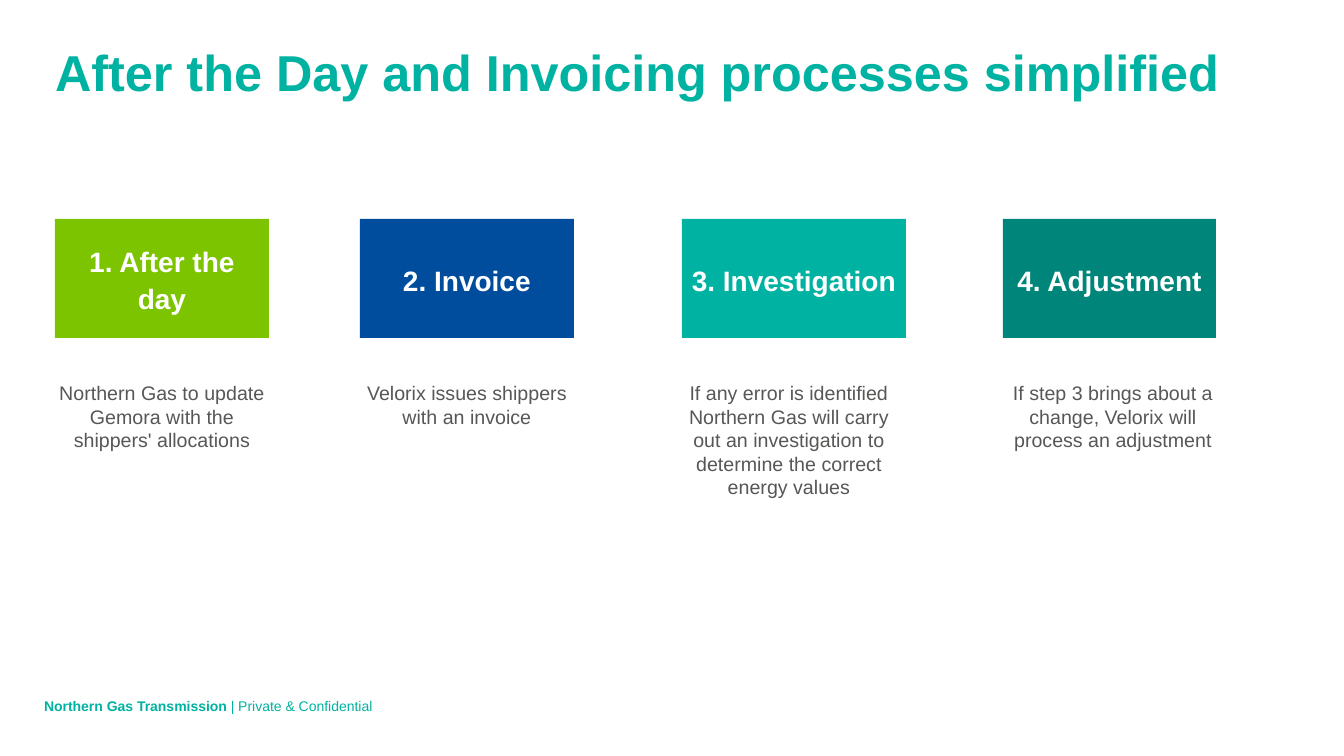
from pptx import Presentation
from pptx import util as u
from pptx.dml.color import RGBColor
from pptx.enum import shapes, text

HUES = {"teal": "00B2A1", "lime": "7CC400", "blue": "004C9D",
        "pine": "00857A", "gray": "575756", "white": "FFFFFF"}
TITLE = "After the Day and Invoicing processes simplified"
FOOTER = [("Northern Gas Transmission ", True), ("| Private & Confidential", False)]
STEPS = [
    ("1. After the day", "lime", 55, 214, 55,
     "Northern Gas to update Gemora with the shippers' allocations", 71),
    ("2. Invoice", "blue", 360, 214, 360,
     "Velorix issues shippers with an invoice", 47),
    ("3. Investigation", "teal", 682, 224, 682,
     "If any error is identified Northern Gas will carry out an investigation "
     "to determine the correct energy values", 119),
    ("4. Adjustment", "pine", 1003, 213, 1006,
     "If step 3 brings about a change, Velorix will process an adjustment", 71),
]
BOX_TOP, BOX_HIGH = 219, 119
NOTE_TOP, NOTE_WIDE = 381, 214
PAD = 8


def px(n):
    return round(n * 914400 / 100.8)


def write(shape, runs, size, hue, pad=0, mid=False, center=False, after=0, lead=None):
    frame = shape.text_frame
    frame.word_wrap = True
    frame.margin_left = frame.margin_right = px(pad)
    frame.margin_top = frame.margin_bottom = px(pad)
    frame.vertical_anchor = text.MSO_ANCHOR.MIDDLE if mid else text.MSO_ANCHOR.TOP
    para = frame.paragraphs[0]
    para.alignment = text.PP_ALIGN.CENTER if center else text.PP_ALIGN.LEFT
    para.space_after = u.Pt(after)
    if lead:
        para.line_spacing = lead
    for words, bold in runs:
        run = para.add_run()
        run.text = words
        font = run.font
        font.name, font.size, font.bold = "Arial", u.Pt(size), bold
        font.color.rgb = RGBColor.from_string(HUES[hue])


def label(slide, area, runs, size, hue, **style):
    box = slide.shapes.add_textbox(*map(px, area))
    write(box, runs, size, hue, **style)
    return box


def block(slide, area, words, hue):
    box = slide.shapes.add_shape(shapes.MSO_SHAPE.RECTANGLE, *map(px, area))
    box.shadow.inherit = False
    box.fill.solid()
    box.fill.fore_color.rgb = RGBColor.from_string(HUES[hue])
    box.line.fill.background()
    write(box, [(words, True)], 20, "white", pad=PAD, mid=True,
          center=True, after=4.5, lead=1.1)


def main():
    deck = Presentation()
    deck.slide_width, deck.slide_height = px(1344), px(756)
    slide = deck.slides.add_slide(deck.slide_layouts[6])
    label(slide, (44, 694, 408, 24), FOOTER, 10, "teal", mid=True)
    label(slide, (55, 41, 1249, 64), [(TITLE, True)], 36, "teal")
    for head, hue, left, wide, start, note, high in STEPS:
        block(slide, (left, BOX_TOP, wide, BOX_HIGH), head, hue)
        box = label(slide, (start, NOTE_TOP, NOTE_WIDE, high), [(note, False)],
                    14, "gray", center=True, after=6)
        box.text_frame.auto_size = text.MSO_AUTO_SIZE.SHAPE_TO_FIT_TEXT
    deck.save("out.pptx")


if __name__ == "__main__":
    main()
